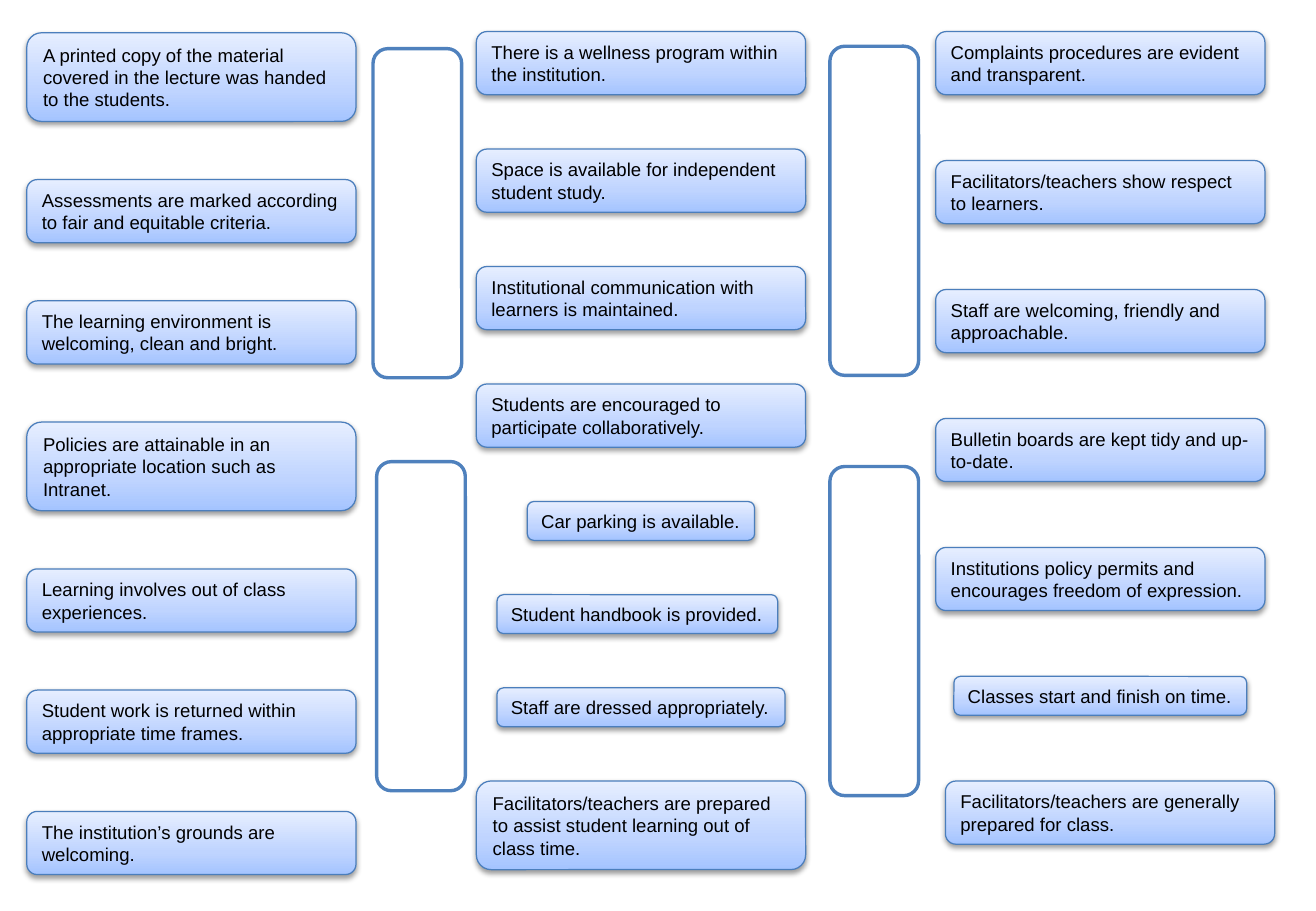
import copy
from dataclasses import dataclass

import lxml.etree
import pptx
import pptx.dml.color
import pptx.enum.shapes
import pptx.enum.text
import pptx.oxml.ns
import pptx.util

EMU_PER_PX = 9144  # 100 px to the inch


@dataclass(frozen=True)
class Theme:
    font: str = "Arial"
    text_size: int = 11
    text: str = "000000"
    card_gradient: tuple = ((0, "A4C4FF"), (0.35, "BFD4FF"), (1, "E6EEFF"))
    card_line: str = "4B7EBC"
    card_line_width: float = 0.75
    shadow: str = "000000"
    panel_fill: str = "FFFFFF"
    panel_line: str = "4F81BD"
    panel_line_width: float = 2


def px(length):
    return pptx.util.Emu(round(length * EMU_PER_PX))


def rgb(value):
    return pptx.dml.color.RGBColor.from_string(value)


def write_text(frame, text, *, font, size, color, wrap=True):
    frame.word_wrap = wrap
    frame.auto_size = pptx.enum.text.MSO_AUTO_SIZE.SHAPE_TO_FIT_TEXT
    frame.vertical_anchor = pptx.enum.text.MSO_ANCHOR.MIDDLE
    paragraph = frame.paragraphs[0]
    paragraph.alignment = pptx.enum.text.PP_ALIGN.LEFT
    run = paragraph.add_run()
    run.text = text
    run.font.name = font
    run.font.size = pptx.util.Pt(size)
    run.font.color.rgb = rgb(color)


class Board:
    """Draws statement cards and empty sorting panels on one slide."""

    def __init__(self, slide, theme):
        self.slide = slide
        self.theme = theme

    def rounded_box(self, left, top, width, height, line, line_width):
        shape = self.slide.shapes.add_shape(
            pptx.enum.shapes.MSO_SHAPE.ROUNDED_RECTANGLE,
            px(left), px(top), px(width), px(height))
        shape.shadow.inherit = False
        shape.line.color.rgb = rgb(line)
        shape.line.width = pptx.util.Pt(line_width)
        return shape

    def shade(self, shape):
        shape.fill.gradient()
        shape.fill.gradient_angle = 90
        properties = shape.element.spPr
        stops = properties.find(".//" + pptx.oxml.ns.qn("a:gsLst"))
        stops.insert(1, copy.deepcopy(stops[0]))
        for stop, (position, color) in zip(shape.fill.gradient_stops, self.theme.card_gradient):
            stop.position = position
            stop.color.rgb = rgb(color)

    def cast_shadow(self, shape):
        qn = pptx.oxml.ns.qn
        effects = shape.element.spPr.find(qn("a:effectLst"))
        shadow = lxml.etree.SubElement(
            effects, qn("a:outerShdw"), blurRad="40000", dist="20000",
            dir="5400000", rotWithShape="0")
        color = lxml.etree.SubElement(shadow, qn("a:srgbClr"), val=self.theme.shadow)
        lxml.etree.SubElement(color, qn("a:alpha"), val="38000")

    def card(self, text, left, top, width, height, wrap):
        theme = self.theme
        shape = self.rounded_box(left, top, width, height, theme.card_line, theme.card_line_width)
        self.shade(shape)
        self.cast_shadow(shape)
        write_text(shape.text_frame, text, font=theme.font, size=theme.text_size,
                   color=theme.text, wrap=wrap)

    def column(self, top, bottom, cards):
        """Stack cards from top to bottom with equal gaps."""
        heights = [CARD_HEIGHTS[lines] for _, lines, _, _ in cards]
        gap = (bottom - top - sum(heights)) / (len(cards) - 1)
        for (text, lines, left, width), height in zip(cards, heights):
            self.card(text, left, top, width, height, wrap=lines > 1)
            top += height + gap

    def panel(self, left, top):
        theme = self.theme
        shape = self.rounded_box(left, top, CARD_WIDTH, CARD_HEIGHTS[3],
                                 theme.panel_line, theme.panel_line_width)
        shape.fill.solid()
        shape.fill.fore_color.rgb = rgb(theme.panel_fill)
        shape.rotation = 270


CARD_WIDTH = 271
CARD_HEIGHTS = {1: 32, 2: 52, 3: 73}  # by number of text lines
LEFT, MIDDLE, RIGHT = 22, 392, 770

# Columns: top, bottom, cards as (text, lines, left, width)
COLUMNS = [
    (27, 720, [
        ("A printed copy of the material covered in the lecture was handed to the students.", 3, LEFT, CARD_WIDTH),
        ("Assessments are marked according to fair and equitable criteria.", 2, LEFT, CARD_WIDTH),
        ("The learning environment is welcoming, clean and bright.", 2, LEFT, CARD_WIDTH),
        ("Policies are attainable in an appropriate location such as Intranet.", 3, LEFT, CARD_WIDTH),
        ("Learning involves out of class experiences.", 2, LEFT, CARD_WIDTH),
        ("Student work is returned within appropriate time frames.", 2, LEFT, CARD_WIDTH),
        ("The institution’s grounds are welcoming.", 2, LEFT, CARD_WIDTH),
    ]),
    (26, 716, [
        ("There is a wellness program within the institution.", 2, MIDDLE, CARD_WIDTH),
        ("Space is available for independent student study.", 2, MIDDLE, CARD_WIDTH),
        ("Institutional communication with learners is maintained.", 2, MIDDLE, CARD_WIDTH),
        ("Students are encouraged to participate collaboratively.", 2, MIDDLE, CARD_WIDTH),
        ("Car parking is available.", 1, 434, 187),
        ("Student handbook is provided.", 1, 409, 231),
        ("Staff are dressed appropriately.", 1, 409, 237),
        ("Facilitators/teachers are prepared to assist student learning out of class time.", 3, MIDDLE, CARD_WIDTH),
    ]),
    (26, 695, [
        ("Complaints procedures are evident and transparent.", 2, RIGHT, CARD_WIDTH),
        ("Facilitators/teachers show respect to learners.", 2, RIGHT, CARD_WIDTH),
        ("Staff are welcoming, friendly and approachable.", 2, RIGHT, CARD_WIDTH),
        ("Bulletin boards are kept tidy and up-to-date.", 2, RIGHT, CARD_WIDTH),
        ("Institutions policy permits and encourages freedom of expression.", 2, RIGHT, CARD_WIDTH),
        ("Classes start and finish on time.", 1, 785, 241),
        ("Facilitators/teachers are generally prepared for class.", 2, 778, CARD_WIDTH),
    ]),
]

# Panels: left and top before the quarter turn
PANELS = [(208, 139), (211, 479), (584, 137), (584, 483)]


def main():
    presentation = pptx.Presentation()
    presentation.slide_width, presentation.slide_height = px(1083), px(750)
    board = Board(presentation.slides.add_slide(presentation.slide_layouts[6]), Theme())

    # Statement cards
    for top, bottom, cards in COLUMNS:
        board.column(top, bottom, cards)

    # Empty sorting panels
    for left, top in PANELS:
        board.panel(left, top)

    presentation.save("out.pptx")


if __name__ == "__main__":
    main()
